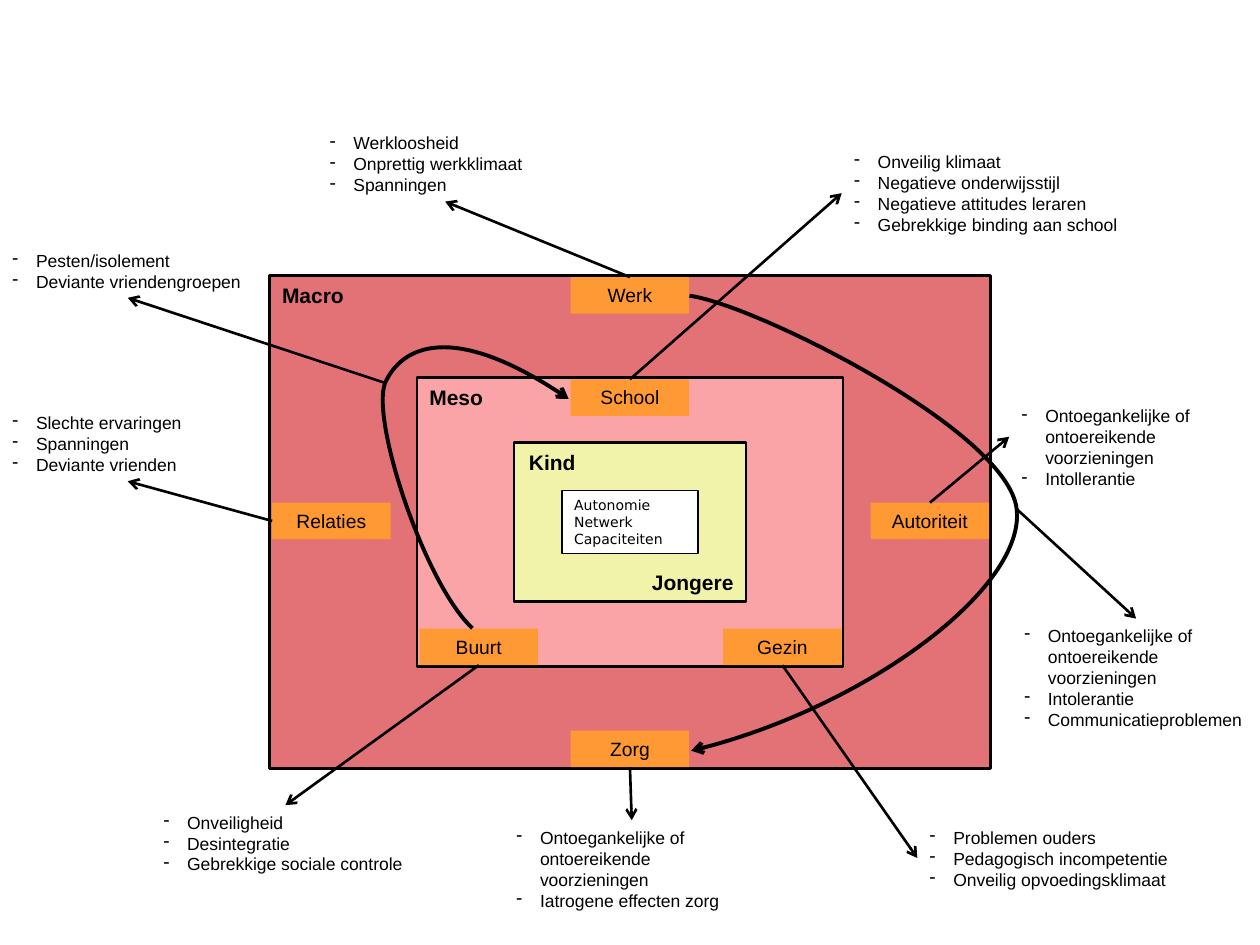
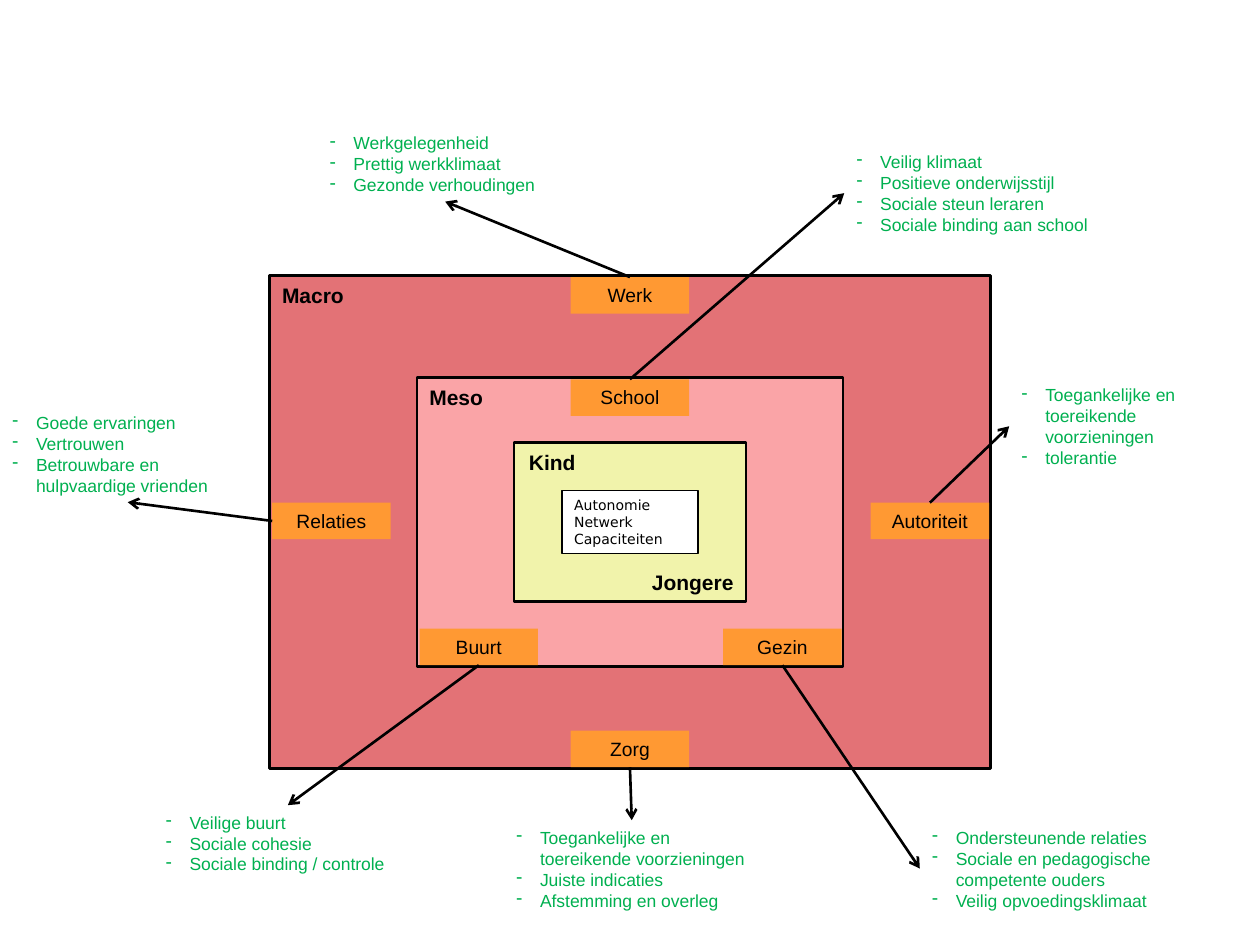
from lxml import etree
from pptx import Presentation
from pptx.dml.color import RGBColor
from pptx.enum.shapes import MSO_CONNECTOR, MSO_SHAPE
from pptx.enum.text import MSO_ANCHOR, PP_ALIGN
from pptx.oxml.ns import qn
from pptx.util import Pt

STRAIGHT = MSO_CONNECTOR.STRAIGHT
RECT, ROUNDED = MSO_SHAPE.RECTANGLE, MSO_SHAPE.ROUNDED_RECTANGLE
TOP_ANCHOR, BOTTOM_ANCHOR = MSO_ANCHOR.TOP, MSO_ANCHOR.BOTTOM
LEFT_ALIGN, CENTER_ALIGN, RIGHT_ALIGN = PP_ALIGN.LEFT, PP_ALIGN.CENTER, PP_ALIGN.RIGHT

BLACK = RGBColor(0x00, 0x00, 0x00)
WHITE = RGBColor(0xFF, 0xFF, 0xFF)
GREEN = RGBColor(0x00, 0xB0, 0x50)
MACRO_RED = RGBColor(0xE3, 0x72, 0x76)
MESO_PINK = RGBColor(0xFA, 0xA4, 0xA7)
KIND_YELLOW = RGBColor(0xF1, 0xF3, 0xAB)
ORANGE = RGBColor(0xFF, 0x99, 0x33)

FONT, CORE_FONT = "Arial", "DejaVu Sans"
CENTER_X, CENTER_Y = 360, 298.3
TAG_W, TAG_H = 67.7, 20.9
LEVEL_LABEL_H = 21.6
LINE_H, INSET_Y, DASH_INDENT = 12, 3.6, 13.5

# Connection sites of a rectangle
TOP, LEFT, BOTTOM = 0, 1, 2

# Nested levels around the child: width, height, fill
LEVELS = [
    (411.8, 281.5, MACRO_RED),
    (243.4, 164.9, MESO_PINK),
    (132.5, 90.7, KIND_YELLOW),
]
LEVEL_LABELS = [
    ("Macro", 154.1, 157.7, LEFT_ALIGN),
    ("Meso", 238.3, 216, LEFT_ALIGN),
    ("Kind", 295.2, 253.4, LEFT_ALIGN),
    ("Jongere", 358.6, 321.8, RIGHT_ALIGN),
]
# Centre of each environment tag
TAGS = {
    "Werk": (CENTER_X, 168.8),
    "Autoriteit": (531.4, 297.7),
    "Relaties": (189.4, 297.7),
    "Zorg": (CENTER_X, 428),
    "School": (CENTER_X, 227.2),
    "Gezin": (447.1, 369.7),
    "Buurt": (273.6, 369.7),
}
# Note per tag: left, top, width, site on the tag, site on the note
NOTE_PLACES = {
    "School": (481, 82.8, 187.2, TOP, LEFT),
    "Gezin": (524.2, 468.7, 162.7, BOTTOM, LEFT),
    "Buurt": (86.4, 460.1, 153.4, BOTTOM, TOP),
    "Autoriteit": (576.7, 216, 142, TOP, LEFT),
    "Werk": (181.4, 72, 146, TOP, BOTTOM),
    "Relaties": (0, 231.8, 146, LEFT, BOTTOM),
    "Zorg": (288, 468.7, 146, BOTTOM, TOP),
}
SHIFTED_NOTES = ("School", "Gezin", "Buurt")

# Notes per tag: height in lines, items
RISKS = {
    "School": (4, ["Onveilig klimaat", "Negatieve onderwijsstijl",
                   "Negatieve attitudes leraren", "Gebrekkige binding aan school"]),
    "Gezin": (3, ["Problemen ouders", "Pedagogisch incompetentie",
                  "Onveilig opvoedingsklimaat"]),
    "Buurt": (3, ["Onveiligheid", "Desintegratie", "Gebrekkige sociale controle"]),
    "Autoriteit": (5, ["Ontoegankelijke of ontoereikende voorzieningen",
                       "Intollerantie"]),
    "Werk": (3, ["Werkloosheid", "Onprettig werkklimaat", "Spanningen"]),
    "Relaties": (3, ["Slechte ervaringen", "Spanningen", "Deviante vrienden"]),
    "Zorg": (4, ["Ontoegankelijke of ontoereikende voorzieningen",
                 "Iatrogene effecten zorg"]),
}
STRENGTHS = {
    "School": (4, ["Veilig klimaat", "Positieve onderwijsstijl",
                   "Sociale steun leraren", "Sociale binding aan school"]),
    "Gezin": (4, ["Ondersteunende relaties",
                  "Sociale en pedagogische competente ouders",
                  "Veilig opvoedingsklimaat"]),
    "Buurt": (3, ["Veilige buurt", "Sociale cohesie", "Sociale binding / controle"]),
    "Autoriteit": (4, ["Toegankelijke en toereikende voorzieningen", "tolerantie"]),
    "Werk": (3, ["Werkgelegenheid", "Prettig werkklimaat", "Gezonde verhoudingen"]),
    "Relaties": (4, ["Goede ervaringen", "Vertrouwen",
                     "Betrouwbare en hulpvaardige vrienden"]),
    "Zorg": (4, ["Toegankelijke en toereikende voorzieningen",
                 "Juiste indicaties", "Afstemming en overleg"]),
}
# Links between tags: curve points, note place, arrow site, height in lines, items
LINKS = [
    ([(270, 359.3), (242.6, 334.1), (211.7, 241.2), (220.3, 218.9),
      (229.7, 197.3), (261.4, 183.6), (324.7, 227.5)],
     (0, 139, 146), BOTTOM, 2, ["Pesten/isolement", "Deviante vriendengroepen"]),
    ([(393.8, 169.2), (431.3, 174.2), (576, 245.5), (581, 290.9),
      (586.1, 335.5), (491.8, 406.1), (394.6, 429.1)],
     (578.2, 353.5, 142), TOP, 5,
     ["Ontoegankelijke of ontoereikende voorzieningen", "Intolerantie",
      "Communicatieproblemen"]),
]


def write_text(shape, lines, size=10, font=FONT, color=BLACK, bold=False,
               align=LEFT_ALIGN, anchor=TOP_ANCHOR, dashed=False):
    frame = shape.text_frame
    frame.word_wrap = True
    frame.vertical_anchor = anchor
    frame.text = "\n".join(lines)
    for paragraph in frame.paragraphs:
        if dashed:
            indent = Pt(DASH_INDENT)
            props = paragraph._p.get_or_add_pPr()
            props.set("marL", str(indent))
            props.set("indent", str(-indent))
            paragraph.line_spacing = Pt(LINE_H)
            etree.SubElement(props, qn("a:buChar")).set("char", "-")
        paragraph.alignment = align
        paragraph.font.size = Pt(size)
        paragraph.font.name = font
        paragraph.font.bold = bold
        paragraph.font.color.rgb = color


def add_centered(slide, kind, x, y, width, height, fill, line=None):
    shape = slide.shapes.add_shape(
        kind, Pt(x - width / 2), Pt(y - height / 2), Pt(width), Pt(height))
    shape.shadow.inherit = False
    shape.fill.solid()
    shape.fill.fore_color.rgb = fill
    if line:
        shape.line.color.rgb = BLACK
        shape.line.width = Pt(line)
    else:
        shape.line.fill.background()
    return shape


def style_arrow(shape, width):
    shape.line.color.rgb = BLACK
    shape.line.width = Pt(width)
    outline = shape.element.spPr.find(qn("a:ln"))
    etree.SubElement(outline, qn("a:tailEnd")).set("type", "arrow")


def add_note(slide, place, line_count, items, color):
    left, top, width = place
    note = slide.shapes.add_textbox(
        Pt(left), Pt(top), Pt(width), Pt(line_count * LINE_H + 2 * INSET_Y))
    write_text(note, items, color=color, anchor=BOTTOM_ANCHOR, dashed=True)
    return note


def add_arrow(slide, note, note_site, start=(0, 0), tag=None, tag_site=TOP):
    x, y = map(Pt, start)
    arrow = slide.shapes.add_connector(STRAIGHT, x, y, x, y)
    if tag:
        arrow.begin_connect(tag, tag_site)
    arrow.end_connect(note, note_site)
    style_arrow(arrow, 1.5)
    etree.SubElement(arrow.element.spPr, qn("a:effectLst"))


def add_curve(slide, points):
    """Draw a smooth arrow: a start, then two control points and an end per bend."""
    builder = slide.shapes.build_freeform(*points[0], scale=Pt(1))
    builder.add_line_segments(points[1:], close=False)
    curve = builder.convert_to_shape()
    segments = list(curve.element.iter(qn("a:lnTo")))
    outline = segments[0].getparent()
    for first in range(0, len(segments), 3):
        bend = etree.SubElement(outline, qn("a:cubicBezTo"))
        for segment in segments[first:first + 3]:
            bend.append(segment[0])
            outline.remove(segment)
    curve.shadow.inherit = False
    curve.fill.background()
    style_arrow(curve, 2.25)


def add_model(slide):
    """Draw the nested levels and return the tags by name."""
    for width, height, fill in LEVELS:
        level = add_centered(slide, ROUNDED, CENTER_X, CENTER_Y, width, height, fill, 1.5)
        level.adjustments[0] = 0
    for name, left, top, align in LEVEL_LABELS:
        label = slide.shapes.add_textbox(
            Pt(left), Pt(top), Pt(TAG_W), Pt(LEVEL_LABEL_H))
        write_text(label, [name], size=12, bold=True, align=align)
    tags = {}
    for name, (x, y) in TAGS.items():
        tags[name] = add_centered(slide, RECT, x, y, TAG_W, TAG_H, ORANGE)
        write_text(tags[name], [name], size=11, align=CENTER_ALIGN)
    core = add_centered(slide, RECT, CENTER_X, CENTER_Y, 78, 36, WHITE, 1)
    write_text(core, ["Autonomie", "Netwerk", "Capaciteiten"], size=8, font=CORE_FONT)
    return tags


def add_factors(slide, factors, color, shift=0):
    """Draw the model with one note and arrow per tag."""
    tags = add_model(slide)
    for name, (left, top, width, tag_site, note_site) in NOTE_PLACES.items():
        if name in SHIFTED_NOTES:
            left += shift
        note = add_note(slide, (left, top, width), *factors[name], color)
        add_arrow(slide, note, note_site, tag=tags[name], tag_site=tag_site)


def main():
    deck = Presentation()
    deck.slide_width, deck.slide_height = Pt(720), Pt(540)
    blank = deck.slide_layouts[6]

    # Risk factors, with the links between environments
    risk_slide = deck.slides.add_slide(blank)
    add_factors(risk_slide, RISKS, BLACK)
    for points, place, site, line_count, items in LINKS:
        add_curve(risk_slide, points)
        note = add_note(risk_slide, place, line_count, items, BLACK)
        add_arrow(risk_slide, note, site, start=points[3])

    # Protective factors
    add_factors(deck.slides.add_slide(blank), STRENGTHS, GREEN, shift=1.4)

    deck.save("out.pptx")


if __name__ == "__main__":
    main()
